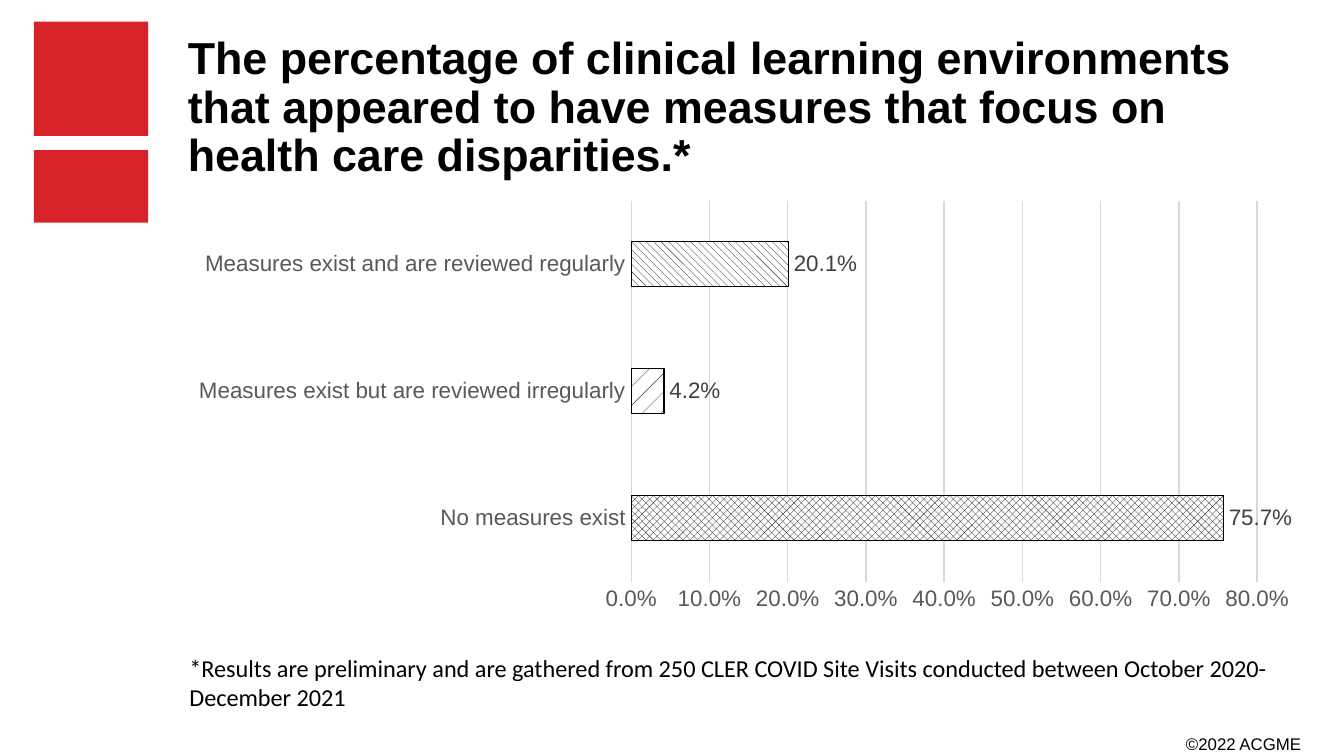
"""Build the slide on measures that focus on health care disparities."""
from pptx import Presentation
from pptx.chart.data import CategoryChartData
from pptx.dml.color import RGBColor
from pptx.enum.chart import XL_CHART_TYPE, XL_LABEL_POSITION, XL_TICK_MARK
from pptx.enum.dml import MSO_PATTERN
from pptx.enum.shapes import MSO_SHAPE
from pptx.enum.text import PP_ALIGN
from pptx.util import Cm, Pt

BAR_CLUSTERED = XL_CHART_TYPE.BAR_CLUSTERED
OUTSIDE_END = XL_LABEL_POSITION.OUTSIDE_END
NO_TICK = XL_TICK_MARK.NONE
RECTANGLE = MSO_SHAPE.RECTANGLE
LEFT, RIGHT = PP_ALIGN.LEFT, PP_ALIGN.RIGHT

BLACK = RGBColor(0x00, 0x00, 0x00)
WHITE = RGBColor(0xFF, 0xFF, 0xFF)
RED = RGBColor(0xD7, 0x22, 0x29)
LABEL_GRAY = RGBColor(0x40, 0x40, 0x40)
AXIS_GRAY = RGBColor(0x59, 0x59, 0x59)
GRID_GRAY = RGBColor(0xD9, 0xD9, 0xD9)

TITLE = ("The percentage of clinical learning environments that appeared to "
         "have measures that focus on health care disparities.*")
FOOTNOTE = ("*Results are preliminary and are gathered from 250 CLER COVID Site "
            "Visits conducted between October 2020-December 2021")
COPYRIGHT = "©2022 ACGME"

MEASURES = [
    ("No measures exist", 0.757, MSO_PATTERN.SOLID_DIAMOND),
    ("Measures exist but are reviewed irregularly", 0.042, MSO_PATTERN.PERCENT_5),
    ("Measures exist and are reviewed regularly", 0.201,
     MSO_PATTERN.WIDE_DOWNWARD_DIAGONAL),
]
RED_BLOCKS = [(0.64, 2.84, 2.16, 1.37), (0.64, 0.41, 2.16, 2.16)]
CHART_PLACE = (3.33, 3.63, 21.46, 8.08)
TEXTS = [
    (TITLE, (3.3, 0.56, 21.51, 3.63), "Arial", 24, True, LEFT, 0.9, True),
    (FOOTNOTE, (3.33, 12.22, 21.51, 1.37), "Calibri", 13, False, LEFT, 1, True),
    (COPYRIGHT, (22.12, 13.74, 2.72, 0.64), "Arial", 9, False, RIGHT, 1, False),
]


def style_font(font, name, size, color, bold=False):
    font.name = name
    font.size = Pt(size)
    font.bold = bold
    font.color.rgb = color


def style_line(line, color):
    line.color.rgb = color
    line.width = Pt(0.75)


def add_red_block(page, place):
    block = page.shapes.add_shape(RECTANGLE, *map(Cm, place))
    block.shadow.inherit = False
    block.fill.solid()
    block.fill.fore_color.rgb = RED
    block.line.fill.background()


def add_text(page, text, place, name, size, bold, align, spacing, wrap):
    box = page.shapes.add_textbox(*map(Cm, place))
    box.text_frame.word_wrap = wrap
    box.text_frame.text = text
    para = box.text_frame.paragraphs[0]
    para.alignment = align
    para.line_spacing = spacing
    style_font(para.runs[0].font, name, size, BLACK, bold)


def add_measures_chart(page):
    data = CategoryChartData(number_format="0.0%")
    data.categories = [label for label, _, _ in MEASURES]
    data.add_series("Series 1", [share for _, share, _ in MEASURES])
    chart = page.shapes.add_chart(BAR_CLUSTERED, *map(Cm, CHART_PLACE), data).chart
    chart.has_legend = False
    chart.has_title = False
    style_font(chart.font, "Arial", 10, BLACK)

    for axis in (chart.category_axis, chart.value_axis):
        axis.major_tick_mark = NO_TICK
        axis.minor_tick_mark = NO_TICK
        style_font(axis.tick_labels.font, "Arial", 12, AXIS_GRAY)
    style_line(chart.category_axis.format.line, GRID_GRAY)

    scale = chart.value_axis
    scale.minimum_scale, scale.maximum_scale, scale.major_unit = 0, 0.8, 0.1
    scale.tick_labels.number_format = "0.0%"
    scale.tick_labels.number_format_is_linked = False
    scale.format.line.fill.background()
    style_line(scale.major_gridlines.format.line, GRID_GRAY)

    plot = chart.plots[0]
    plot.gap_width = 182
    plot.vary_by_categories = False
    series = plot.series[0]
    for index, (_, _, pattern) in enumerate(MEASURES):
        bar = series.points[index].format
        bar.fill.patterned()
        bar.fill.pattern = pattern
        bar.fill.fore_color.rgb = BLACK
        bar.fill.back_color.rgb = WHITE
        style_line(bar.line, BLACK)

    labels = series.data_labels
    labels.show_value = True
    labels.number_format = "0.0%"
    labels.number_format_is_linked = False
    labels.position = OUTSIDE_END
    style_font(labels.font, "Arial", 12, LABEL_GRAY)


def main():
    deck = Presentation()
    deck.slide_width, deck.slide_height = Cm(25.4), Cm(14.29)
    page = deck.slides.add_slide(deck.slide_layouts[6])
    for place in RED_BLOCKS:
        add_red_block(page, place)
    add_measures_chart(page)
    for item in TEXTS:
        add_text(page, *item)
    deck.save("out.pptx")


if __name__ == "__main__":
    main()
